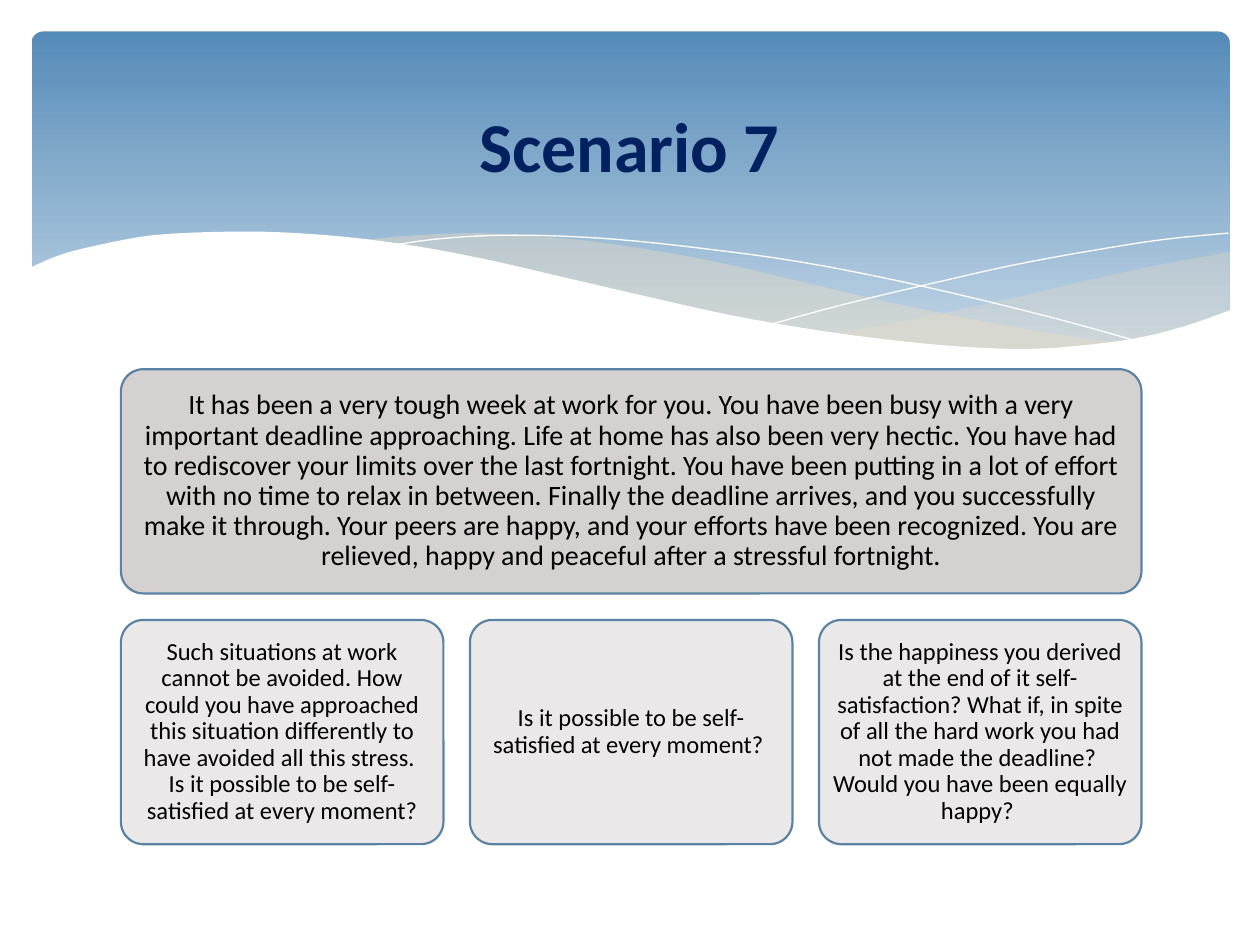
from pptx import Presentation
from pptx import util as u
from pptx.dml.color import RGBColor
from pptx.enum import shapes, text
from pptx.oxml.xmlchemy import OxmlElement

PX = 9144  # EMU per px, 100 px to the inch
FONT = "Calibri"
COLORS = {
    "white": "FFFFFF", "black": "000000", "navy": "002060",
    "sky_top": "558BB8", "sky_bottom": "BFD3E4", "sand": "EBDDC3",
    "story": "D5D1D1", "question": "EAE8E8", "border": "5B82A2",
}

STORY = (
    "It has been a very tough week at work for you. You have been busy with a very "
    "important deadline approaching. Life at home has also been very hectic. You have had "
    "to rediscover your limits over the last fortnight. You have been putting in a lot of "
    "effort with no time to relax in between. Finally the deadline arrives, and you "
    "successfully make it through. Your peers are happy, and your efforts have been "
    "recognized. You are relieved, happy and peaceful after a stressful fortnight."
)
QUESTIONS = [
    "Such situations at work cannot be avoided. How could you have approached this situation "
    "differently to have avoided all this stress.  Is it possible to be self-satisfied at "
    "every moment?",
    "Is it possible to be self-satisfied at every moment? ",
    "Is the happiness you derived at the end of it self-satisfaction? What if, in spite of "
    "all the hard work you had not made the deadline?  Would you have been equally happy? ",
]

# Knots of the banner's curves, in px
RIGHT_TOP = [(976, 200), (921, 210), (861, 223), (779, 242), (706, 257), (661, 265)]
RIGHT_BOTTOM = [(661, 265), (732, 274), (803, 278), (872, 274), (928, 263), (976, 247)]
MIDDLE_TOP = [(893, 273), (837, 265), (775, 254), (706, 240), (629, 222), (569, 208),
              (514, 198), (465, 191), (420, 187), (380, 185), (344, 186), (313, 188),
              (286, 191)]
MIDDLE_BOTTOM = [(286, 191), (342, 199), (404, 211), (449, 222), (530, 240), (601, 255),
                 (665, 266), (722, 274), (773, 277), (818, 278), (857, 277), (893, 273)]
FALLING_LINE = [(309, 195), (344, 190), (387, 187), (433, 187), (489, 190), (556, 197),
                (636, 208), (727, 226), (831, 251), (907, 272)]
RISING_LINE = [(613, 257), (672, 241), (748, 223), (806, 210), (866, 199), (924, 190),
               (975, 185)]
WHITE_EDGE = [(977, 246), (940, 259), (899, 269), (850, 275), (809, 277), (761, 275),
              (708, 270), (648, 262), (579, 250), (503, 233), (447, 220), (391, 207),
              (340, 197), (292, 190), (250, 186), (211, 184), (177, 184), (146, 185),
              (119, 187), (95, 191), (76, 195), (59, 199), (46, 203), (36, 207), (23, 213)]


def px(*lengths):
    return [round(length * PX) for length in lengths]


def rgb(name):
    return RGBColor.from_string(COLORS[name])


def smooth(knots, steps=4):
    """Points of a Catmull-Rom curve through the knots."""
    ends = [knots[0], *knots, knots[-1]]
    points = [knots[0]]
    for a, b, c, d in zip(ends, ends[1:], ends[2:], ends[3:]):
        for step in range(1, steps + 1):
            t = step / steps
            points.append(tuple(
                (2 * q + (r - p) * t + (2 * p - 5 * q + 4 * r - s) * t ** 2
                 + (3 * q - p - 3 * r + s) * t ** 3) / 2
                for p, q, r, s in zip(a, b, c, d)))
    return points


def write(shape, words, size, color, bold=False, inset=0, spacing=None):
    frame = shape.text_frame
    frame.word_wrap = True
    frame.auto_size = text.MSO_AUTO_SIZE.NONE
    frame.vertical_anchor = text.MSO_ANCHOR.MIDDLE
    frame.margin_left = frame.margin_right = inset * PX
    frame.margin_top = frame.margin_bottom = inset * PX
    paragraph = frame.paragraphs[0]
    paragraph.alignment = text.PP_ALIGN.CENTER
    paragraph.line_spacing = spacing
    run = paragraph.add_run()
    run.text = words
    run.font.name = FONT
    run.font.size = u.Pt(size)
    run.font.bold = bold
    run.font.color.rgb = rgb(color)


def add_round_rect(slide, box, radius):
    rect = slide.shapes.add_shape(shapes.MSO_SHAPE.ROUNDED_RECTANGLE, *px(*box))
    rect.adjustments[0] = radius
    rect.shadow.inherit = False
    return rect


def add_outline(slide, points, close):
    start, *rest = [px(*point) for point in points]
    builder = slide.shapes.build_freeform(*start)
    builder.add_line_segments(rest, close=close)
    outline = builder.convert_to_shape()
    outline.shadow.inherit = False
    return outline


def add_area(slide, points, color, opacity=100):
    area = add_outline(slide, points, close=True)
    area.fill.solid()
    area.fill.fore_color.rgb = rgb(color)
    area.line.fill.background()
    if opacity < 100:
        alpha = OxmlElement("a:alpha")
        alpha.set("val", str(opacity * 1000))
        area.fill._xPr.find(".//{*}srgbClr").append(alpha)


def add_curve(slide, knots):
    curve = add_outline(slide, smooth(knots), close=False)
    curve.fill.background()
    curve.line.color.rgb = rgb("white")
    curve.line.width = 0


def add_banner(slide):
    sky = add_round_rect(slide, (25, 25, 951, 270), 0.034)
    sky.line.fill.background()
    sky.fill.gradient()
    sky.fill.gradient_angle = 270
    for stop, color, position in zip(sky.fill.gradient_stops, ("sky_top", "sky_bottom"), (0, 0.9)):
        stop.color.rgb = rgb(color)
        stop.position = position

    add_area(slide, smooth(RIGHT_TOP) + smooth(RIGHT_BOTTOM), "sand", opacity=29)
    add_area(slide, smooth(MIDDLE_TOP) + smooth(MIDDLE_BOTTOM), "sand", opacity=40)
    add_curve(slide, FALLING_LINE)
    add_curve(slide, RISING_LINE)
    # White ground that cuts the banner's lower edge
    add_area(slide, smooth(WHITE_EDGE) + [(23, 329), (977, 329)], "white")


def add_card(slide, box, words, fill, size, inset):
    card = add_round_rect(slide, box, 0.1)
    card.fill.solid()
    card.fill.fore_color.rgb = rgb(fill)
    card.line.color.rgb = rgb("border")
    card.line.width = u.Pt(1.25)
    write(card, words, size, "black", inset=inset, spacing=0.9)


def place_title(slide, words):
    title = slide.shapes.title
    title.left, title.top, title.width, title.height = px(8, 71, 983, 87)
    write(title, words, 40, "navy", bold=True)
    slide.shapes._spTree.append(title._element)  # in front of the banner


def main():
    deck = Presentation()
    deck.slide_width, deck.slide_height = px(1000, 750)
    slide = deck.slides.add_slide(deck.slide_layouts[5])

    add_banner(slide)

    # Story above, three questions in a row below
    left, width, height, card_width = 96, 810, 178, 256
    add_card(slide, (left, 293, width, height), STORY, "story", 16, inset=7)
    pitch = (width - card_width) // (len(QUESTIONS) - 1)
    for column, question in enumerate(QUESTIONS):
        box = (left + column * pitch, 492, card_width, height)
        add_card(slide, box, question, "question", 14, inset=6)

    place_title(slide, "Scenario 7")
    deck.save("out.pptx")


if __name__ == "__main__":
    main()
